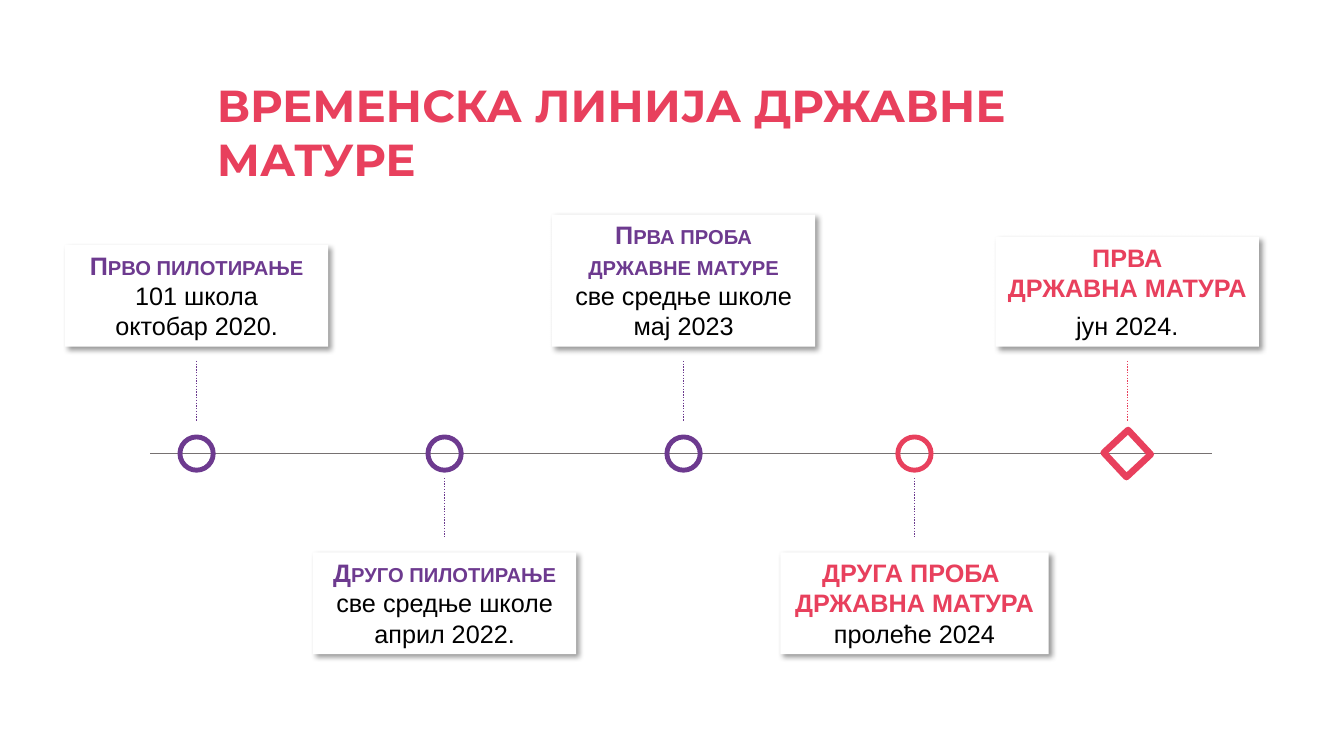
from lxml import etree
from pptx import Presentation, util as u
from pptx.dml.color import RGBColor
from pptx.enum import dml, shapes, text
from pptx.oxml import ns

WIDE, HIGH = 13.33, 7.5
MID = HIGH * 0.6
RED, PLUM, GREY, WHITE, BLACK = "E8405D", "6D3A8F", "767171", "FFFFFF", "000000"
MARK, GAP, STEM = 0.33, 0.14, 0.6


def tint(code):
    return RGBColor.from_string(code)


def apply(goal, form):
    for key, val in form.items():
        setattr(goal, key, val)


def ink(run, size, face, hue, bold):
    apply(run.font, {"size": u.Pt(size), "name": face, "bold": bold})
    run.font.color.rgb = tint(hue)


def node(home, tag, **vals):
    item = etree.SubElement(home, ns.qn(tag))
    for key, val in vals.items():
        item.set(key, str(val))
    return item


def rule(sl, x1, y1, x2, y2, hue, width, dash=None):
    link = sl.shapes.add_connector(
        shapes.MSO_CONNECTOR.STRAIGHT, *map(u.Inches, (x1, y1, x2, y2)))
    link.line.color.rgb = tint(hue)
    apply(link.line, {"width": u.Pt(width), "dash_style": dash})
    node(link._element.spPr, "a:effectLst")


def shade(form):
    fx = node(form._element.spPr, "a:effectLst")
    cast = node(fx, "a:outerShdw", blurRad=u.Pt(4), dist=u.Pt(3),
                dir=45 * 60000, algn="tl", rotWithShape=0)
    node(node(cast, "a:srgbClr", val=BLACK), "a:alpha", val=40000)


def title(sl, box, words):
    head = sl.shapes.title
    left, top, width, height = map(u.Inches, box)
    apply(head, {"left": left, "top": top, "width": width, "height": height})
    frame = head.text_frame
    apply(frame, {"text": words, "word_wrap": True,
                  "auto_size": text.MSO_AUTO_SIZE.NONE,
                  "vertical_anchor": text.MSO_ANCHOR.TOP})
    para = frame.paragraphs[0]
    apply(para, {"alignment": text.PP_ALIGN.LEFT, "line_spacing": 1.0,
                 "space_before": u.Pt(0)})
    ink(para.runs[0], 32, "Montserrat", RED, True)


def card(sl, box, lines, hue, small, space):
    form = sl.shapes.add_shape(shapes.MSO_SHAPE.RECTANGLE, *map(u.Inches, box))
    form.fill.solid()
    form.fill.fore_color.rgb = tint(WHITE)
    form.line.fill.background()
    shade(form)
    frame = form.text_frame
    apply(frame, {"word_wrap": True, "vertical_anchor": text.MSO_ANCHOR.TOP,
                  "auto_size": text.MSO_AUTO_SIZE.SHAPE_TO_FIT_TEXT})
    frame.text = "\n".join(lines)
    for row, para in enumerate(frame.paragraphs):
        first = row == 0
        apply(para, {"alignment": text.PP_ALIGN.CENTER,
                     "space_before": u.Pt(space if first else 0),
                     "space_after": u.Pt(space)})
        for run in para.runs:
            ink(run, 18, "Arial", hue if first else BLACK, first)
            if first and small:
                run.font._element.set("cap", "small")


def mark(sl, x, hue, last):
    kind = shapes.MSO_SHAPE.RECTANGLE if last else shapes.MSO_SHAPE.OVAL
    form = sl.shapes.add_shape(
        kind, *map(u.Inches, (x - MARK / 2, MID - MARK / 2, MARK, MARK)))
    form.fill.background()
    form.line.color.rgb = tint(hue)
    form.line.width = u.Pt(4.75 if last else 3.5)
    form.rotation = 47 if last else 0
    form.shadow.inherit = False


def stop(sl, box, lines, hue, small, last):
    left, top, width, height = box
    x = left + width / 2
    start = top + height + GAP if top < MID else top - GAP - STEM
    mark(sl, x, hue, last)
    card(sl, box, lines, hue, small, 6 if last else 0)
    rule(sl, x, start, x, start + STEM, RED if last else PLUM, 1,
         dml.MSO_LINE.ROUND_DOT)


def line(sl, box, stops):
    left, top, width, height = box
    rule(sl, left, MID, left + width, MID, GREY, 0.5)
    for step, (x, wide, tall, hue, small, lines) in enumerate(stops):
        y = top + height - tall if step % 2 == 0 else HIGH - 2.02
        stop(sl, (x - wide / 2, y, wide, tall), lines, hue, small,
             step == len(stops) - 1)


STOPS = [
    (1.95, 2.61, 1.01, PLUM, True,
     ["Прво пилотирање", "101 школа", "октобар 2020."]),
    (4.41, 2.61, 1.01, PLUM, True,
     ["Друго пилотирање", "све средње школе", "април 2022."]),
    (6.78, 2.61, 1.31, PLUM, True,
     ["Прва проба државне матуре", "све средње школе", "мај 2023"]),
    (9.07, 2.66, 1.01, RED, False,
     ["ДРУГА ПРОБА \vДРЖАВНА МАТУРА", "пролеће 2024"]),
    (11.18, 2.61, 1.09, RED, False,
     ["ПРВА\vДРЖАВНА МАТУРА", "јун 2024."]),
]


def main():
    deck = Presentation()
    apply(deck, {"slide_width": u.Inches(WIDE), "slide_height": u.Inches(HIGH)})
    sl = deck.slides.add_slide(deck.slide_layouts[5])
    title(sl, (2.05, 0.72, 9.93, 0.64), "ВРЕМЕНСКА ЛИНИЈА ДРЖАВНЕ МАТУРЕ")
    line(sl, (1.49, 2.13, 10.53, 1.31), STOPS)
    deck.save("out.pptx")


if __name__ == "__main__":
    main()
